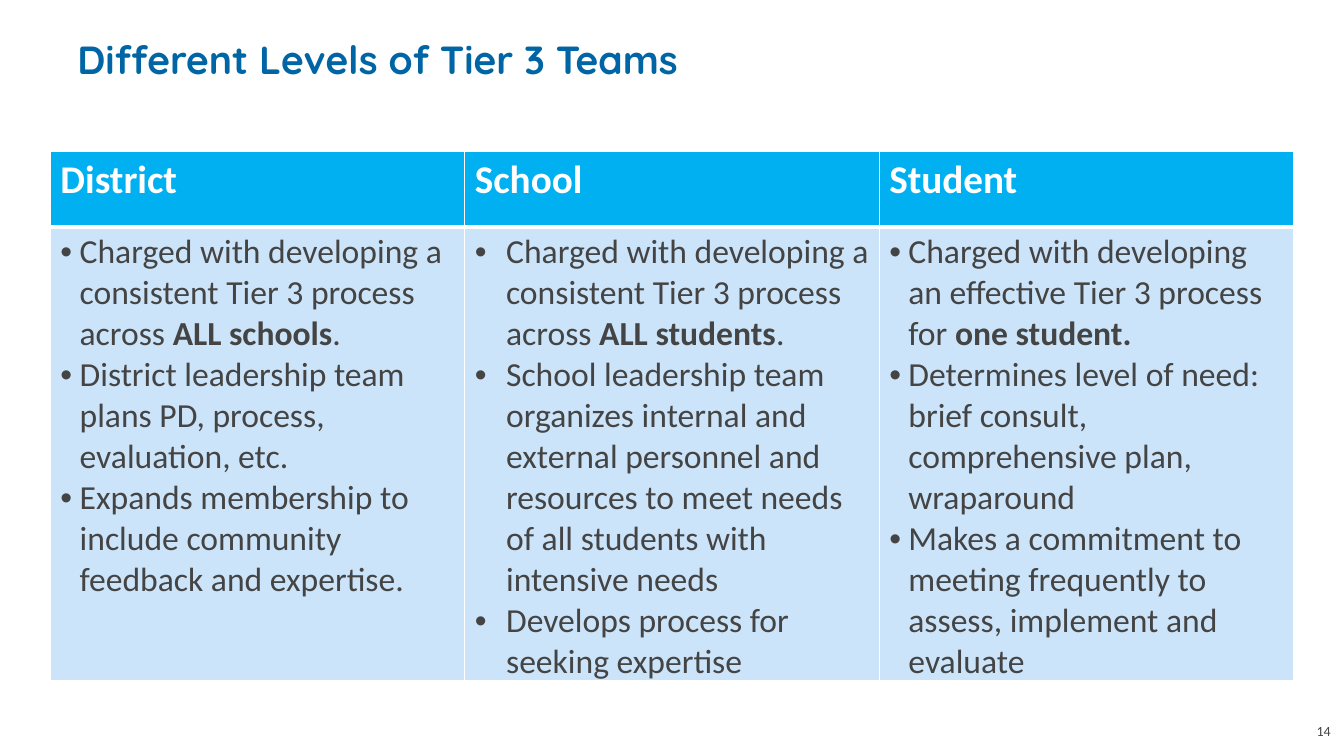
from dataclasses import dataclass

from lxml import etree
from pptx import Presentation
from pptx.dml.color import RGBColor
from pptx.oxml.ns import qn
from pptx.util import Inches, Pt

FONT = "Calibri"
WHITE = "FFFFFF"
GREY = "444444"
HEAD = {"size": Pt(28), "name": FONT, "bold": True}
BODY = {"size": Pt(24), "name": FONT}
TITLE = {"size": Pt(28), "name": "Quicksand", "bold": True}
PAGE = {"size": Pt(10), "name": FONT}


@dataclass
class Level:
    name: str
    indent: float
    points: list[str]


LEVELS = [
    Level("District", 0.19, [
        "Charged with developing a consistent Tier 3 process across *ALL schools*.",
        "District leadership team plans PD, process, evaluation, etc.",
        "Expands membership to include community feedback and expertise.",
    ]),
    Level("School", 0.31, [
        "Charged with developing a consistent Tier 3 process across *ALL students*.",
        "School leadership team organizes internal and external personnel and "
        "resources to meet needs of all students with intensive needs",
        "Develops process for seeking expertise",
    ]),
    Level("Student", 0.19, [
        "Charged with developing an effective Tier 3 process for *one student.*",
        "Determines level of need: brief consult, comprehensive plan, wraparound",
        "Makes a commitment to meeting frequently to assess, implement and evaluate",
    ]),
]


def paint(color: str) -> RGBColor:
    return RGBColor.from_string(color)


def write(para, text: str, form: dict, color: str) -> None:
    for i, part in enumerate(text.split("*")):
        if not part:
            continue
        font = para.add_run().font
        para.runs[-1].text = part
        for key, value in form.items():
            setattr(font, key, value)
        if i % 2:
            font.bold = True
        font.color.rgb = paint(color)


def add_text(slide, box: tuple, text: str, form: dict, color: str, wrap: bool) -> None:
    frame = slide.shapes.add_textbox(*map(Inches, box)).text_frame
    frame.word_wrap = wrap
    write(frame.paragraphs[0], text, form, color)


def bullet(para, indent: float) -> None:
    props = para._p.get_or_add_pPr()
    props.set("marL", str(Inches(indent)))
    props.set("indent", str(-Inches(indent)))
    font = etree.SubElement(props, qn("a:buFont"))
    font.set("typeface", "Arial")
    etree.SubElement(props, qn("a:buChar")).set("char", "•")


def style(cell, color: str, sides: dict) -> None:
    props = cell._tc.get_or_add_tcPr()
    for side, width in sides.items():
        line = etree.SubElement(props, qn(f"a:ln{side}"), w=str(Pt(width)))
        solid = etree.SubElement(line, qn("a:solidFill"))
        etree.SubElement(solid, qn("a:srgbClr"), val=WHITE)
    cell.fill.solid()
    cell.fill.fore_color.rgb = paint(color)


def add_levels(slide) -> None:
    size = map(Inches, (0.5, 1.5, 12.33, 5.25))
    table = slide.shapes.add_table(2, len(LEVELS), *size).table
    table.horz_banding = False
    for row, height in zip(table.rows, (0.75, 4.5)):
        row.height = Inches(height)
    for i, level in enumerate(LEVELS):
        table.columns[i].width = Inches(4.11)
        head, body = table.cell(0, i), table.cell(1, i)
        style(head, "00B0F0", {"L": 1, "R": 1, "T": 1, "B": 3})
        style(body, "CCE4F9", {"L": 1, "R": 1, "T": 3, "B": 1})
        write(head.text_frame.paragraphs[0], level.name, HEAD, WHITE)
        frame = body.text_frame
        for j, point in enumerate(level.points):
            para = frame.add_paragraph() if j else frame.paragraphs[0]
            bullet(para, level.indent)
            write(para, point, BODY, GREY)


def main() -> None:
    deck = Presentation()
    deck.slide_width, deck.slide_height = Inches(13.33), Inches(7.5)
    slide = deck.slides.add_slide(deck.slide_layouts[6])
    add_text(slide, (0.67, 0.3, 12, 0.95), "Different Levels of Tier 3 Teams",
             TITLE, "0065A4", True)
    add_levels(slide)
    add_text(slide, (12.96, 7.12, 0.37, 0.27), "14", PAGE, GREY, False)
    deck.save("out.pptx")


if __name__ == "__main__":
    main()
